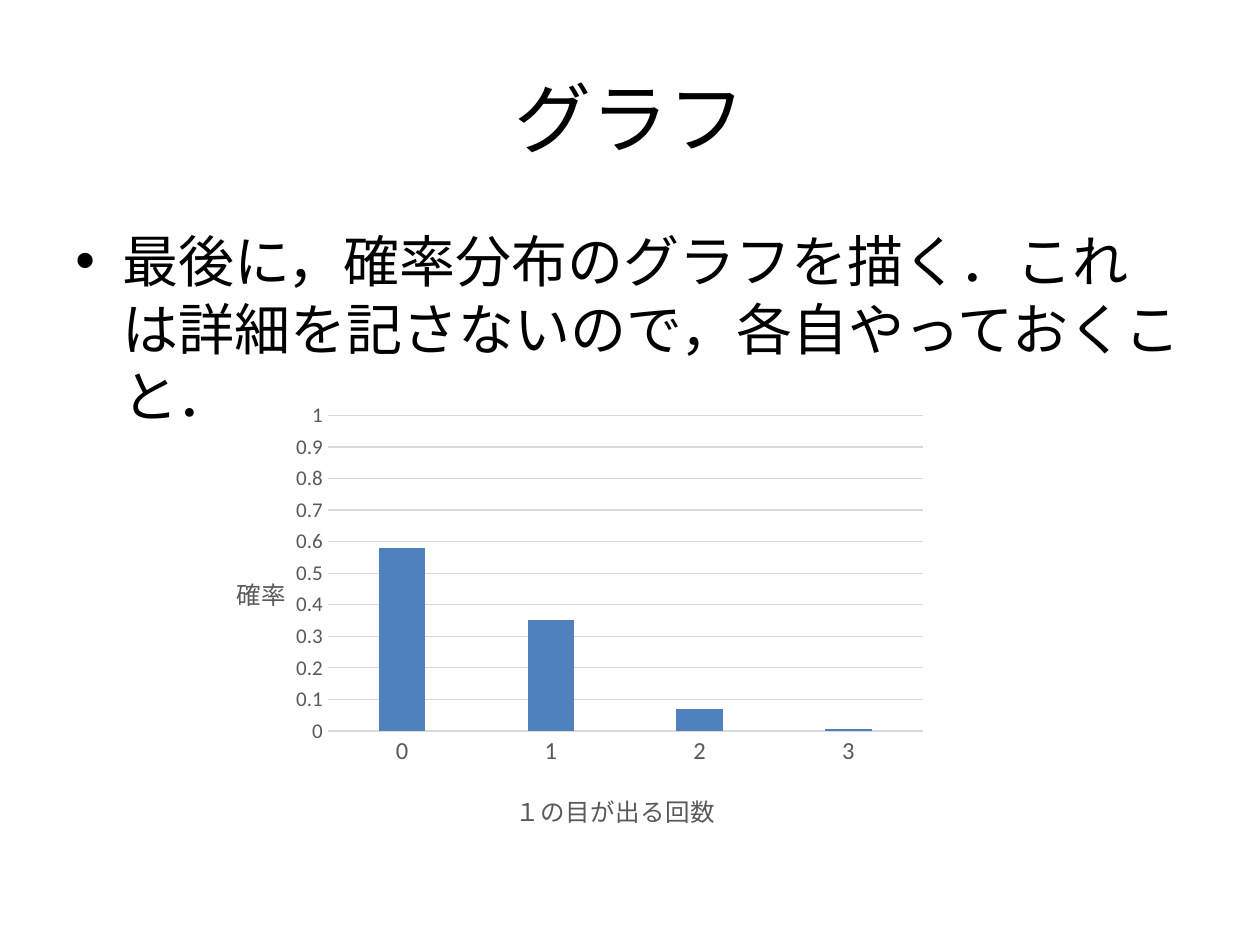
from lxml.etree import SubElement
from pptx import Presentation
from pptx.chart.data import CategoryChartData
from pptx.dml.color import RGBColor as Rgb
from pptx.enum.chart import XL_CHART_TYPE as ChartType, XL_TICK_MARK as Tick
from pptx.enum.lang import MSO_LANGUAGE_ID as Lang
from pptx.enum.text import MSO_ANCHOR as Anchor, PP_ALIGN as Align
from pptx.oxml.ns import qn
from pptx.util import Cm, Pt

# Content
TITLE = "グラフ"
BODY = "最後に，確率分布のグラフを描く．これは詳細を記さないので，各自やっておくこと．"
COUNT_TITLE = "１の目が出る回数"
PROBABILITY_TITLE = "確率"
DISTRIBUTION = {"0": 0.58, "1": 0.35, "2": 0.07, "3": 0.005}

THEME = {
    "font": "Calibri",
    "ink": Rgb(0, 0, 0),
    "muted": Rgb(0x59, 0x59, 0x59),
    "grid": Rgb(0xD9, 0xD9, 0xD9),
    "bar": Rgb(0x4F, 0x81, 0xBD),
    "title": Pt(44), "body": Pt(32), "axis_title": Pt(14),
    "counts": Pt(14), "probabilities": Pt(12), "line": Pt(0.75),
}

# Places: left, top, width, height
MARGIN, CONTENT_WIDTH = Cm(1.27), Cm(22.86)
TITLE_BOX = (MARGIN, Cm(0.76), CONTENT_WIDTH, Cm(3.18))
BODY_BOX = (MARGIN, Cm(4.45), CONTENT_WIDTH, Cm(12.57))
CHART_BOX = (Cm(4.09), Cm(7.92), Cm(14.81), Cm(9.09))
INDENT = Cm(0.95)


def style(font, size, color):
    font.name, font.size, font.bold = THEME["font"], THEME[size], False
    font.color.rgb = THEME[color]


def add_text(slide, box, text, size, anchor):
    frame = slide.shapes.add_textbox(*box).text_frame
    frame.word_wrap, frame.vertical_anchor = True, anchor
    paragraph = frame.paragraphs[0]
    run = paragraph.add_run()
    run.text = text
    style(run.font, size, "ink")
    run.font.language_id = Lang.JAPANESE
    return paragraph


def add_bullet(paragraph):
    props = paragraph._p.get_or_add_pPr()
    props.set("marL", str(INDENT))
    props.set("indent", str(-INDENT))
    SubElement(props, qn("a:buFont")).set("typeface", "Arial")
    SubElement(props, qn("a:buChar")).set("char", "•")


def place(parent, before, **fractions):
    """Put a chart part at fractions of the chart's size."""
    for old in parent.findall(qn("c:layout")):
        parent.remove(old)
    layout = SubElement(parent, qn("c:layout"))
    manual = SubElement(layout, qn("c:manualLayout"))
    if "w" in fractions:
        SubElement(manual, qn("c:layoutTarget")).set("val", "inner")
    for side in "xy":
        SubElement(manual, qn(f"c:{side}Mode")).set("val", "edge")
    for name, value in fractions.items():
        SubElement(manual, qn(f"c:{name}")).set("val", str(value))
    parent.find(qn(before)).addprevious(layout)


def style_axis(axis, title, size, x, y):
    axis.major_tick_mark = axis.minor_tick_mark = Tick.NONE
    style(axis.tick_labels.font, size, "muted")
    frame = axis.axis_title.text_frame
    run = frame.paragraphs[0].add_run()
    run.text = title
    style(run.font, "axis_title", "muted")
    run.font.language_id = Lang.JAPANESE
    frame._txBody.bodyPr.set("rot", "0")
    frame._txBody.bodyPr.set("vert", "horz")
    place(axis.axis_title._element, "c:overlay", x=x, y=y)


def style_line(line):
    line.color.rgb, line.width = THEME["grid"], THEME["line"]


def add_distribution(slide):
    data = CategoryChartData()
    data.categories = list(DISTRIBUTION)
    data.add_series("Series 1", list(DISTRIBUTION.values()))
    chart = slide.shapes.add_chart(
        ChartType.COLUMN_CLUSTERED, *CHART_BOX, data).chart
    chart.has_legend = chart.has_title = False
    chart.font.name, chart.font.size = THEME["font"], Pt(10)

    # Bars
    plot = chart.plots[0]
    plot.vary_by_categories = False
    plot.gap_width, plot.overlap = 219, -27
    fill = plot.series[0].format.fill
    fill.solid()
    fill.fore_color.rgb = THEME["bar"]

    # Axes
    counts, probabilities = chart.category_axis, chart.value_axis
    style_axis(counts, COUNT_TITLE, "counts", 0.42, 0.87)
    style_line(counts.format.line)
    style_axis(probabilities, PROBABILITY_TITLE, "probabilities", 0.04, 0.39)
    probabilities.minimum_scale, probabilities.maximum_scale = 0, 1
    probabilities.major_unit = 0.1
    probabilities.tick_labels.number_format = "General"
    probabilities.tick_labels.number_format_is_linked = False
    probabilities.format.line.fill.background()
    style_line(probabilities.major_gridlines.format.line)
    place(chart._chartSpace.chart.plotArea, "c:barChart",
          x=0.17, y=0.05, w=0.81, h=0.7)


def main():
    deck = Presentation()
    deck.slide_width, deck.slide_height = Cm(25.4), Cm(19.05)
    slide = deck.slides.add_slide(deck.slide_layouts[6])
    heading = add_text(slide, TITLE_BOX, TITLE, "title", Anchor.MIDDLE)
    heading.alignment = Align.CENTER
    add_bullet(add_text(slide, BODY_BOX, BODY, "body", Anchor.TOP))
    add_distribution(slide)
    deck.save("out.pptx")


if __name__ == "__main__":
    main()
